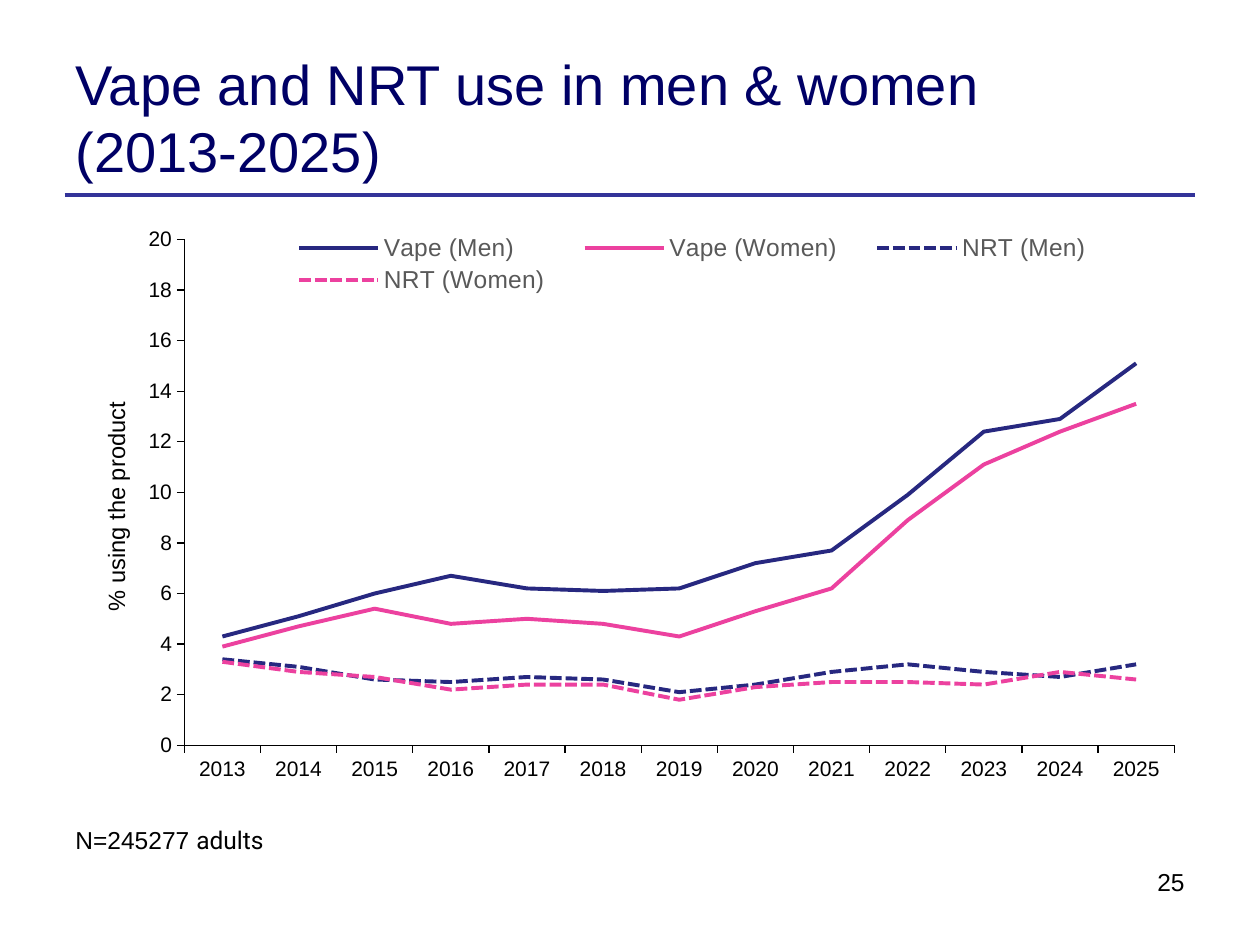
from dataclasses import dataclass
from typing import Optional

from lxml.etree import SubElement
from pptx import Presentation
from pptx.chart.data import CategoryChartData
from pptx.dml.color import RGBColor
from pptx.enum.chart import XL_CHART_TYPE, XL_LEGEND_POSITION, XL_MARKER_STYLE, XL_TICK_MARK
from pptx.enum.dml import MSO_LINE
from pptx.enum.text import MSO_ANCHOR, PP_ALIGN
from pptx.oxml import parse_xml
from pptx.oxml.ns import nsdecls, qn
from pptx.util import Pt

BLACK = RGBColor(0x00, 0x00, 0x00)
TITLE_NAVY = RGBColor(0x00, 0x00, 0x66)
RULE_BLUE = RGBColor(0x33, 0x33, 0x99)
MEN_BLUE = RGBColor(0x27, 0x28, 0x80)
WOMEN_PINK = RGBColor(0xEC, 0x41, 0x9F)
LEGEND_GREY = RGBColor(0x59, 0x59, 0x59)
FONT = "Arial"
MARGIN = 36


@dataclass
class ProductUse:
    name: str
    percents: tuple
    color: RGBColor
    dash: Optional[MSO_LINE] = None


YEARS = [str(year) for year in range(2013, 2026)]
PRODUCT_USES = [
    ProductUse("Vape (Men)", (4.3, 5.1, 6, 6.7, 6.2, 6.1, 6.2, 7.2, 7.7, 9.9, 12.4, 12.9, 15.1), MEN_BLUE),
    ProductUse("Vape (Women)", (3.9, 4.7, 5.4, 4.8, 5, 4.8, 4.3, 5.3, 6.2, 8.9, 11.1, 12.4, 13.5), WOMEN_PINK),
    ProductUse("NRT (Men)", (3.4, 3.1, 2.6, 2.5, 2.7, 2.6, 2.1, 2.4, 2.9, 3.2, 2.9, 2.7, 3.2),
               MEN_BLUE, MSO_LINE.SQUARE_DOT),
    ProductUse("NRT (Women)", (3.3, 2.9, 2.7, 2.2, 2.4, 2.4, 1.8, 2.3, 2.5, 2.5, 2.4, 2.9, 2.6),
               WOMEN_PINK, MSO_LINE.SQUARE_DOT),
]


def style_font(font, size: float, color: RGBColor = BLACK, name: Optional[str] = FONT) -> None:
    font.size = Pt(size)
    font.color.rgb = color
    font.bold = False
    if name:
        font.name = name


def place(element, index: int, inner: bool = False, **fractions: float) -> None:
    """Give a chart part a manual layout, in fractions of the chart."""
    for old_layout in element.findall(qn("c:layout")):
        element.remove(old_layout)
    target = '<c:layoutTarget val="inner"/>' if inner else ""
    modes = "".join(f'<c:{key}Mode val="edge"/>' for key in ("x", "y"))
    values = "".join(f'<c:{key} val="{value}"/>' for key, value in fractions.items())
    element.insert(index, parse_xml(
        f'<c:layout {nsdecls("c")}><c:manualLayout>{target}{modes}{values}</c:manualLayout></c:layout>'))


def add_text(slide, left: float, top: float, width: float, height: float):
    frame = slide.shapes.add_textbox(Pt(left), Pt(top), Pt(width), Pt(height)).text_frame
    frame.word_wrap = True
    return frame.paragraphs[0]


def style_axis(axis) -> None:
    axis.has_major_gridlines = False
    axis.major_tick_mark = XL_TICK_MARK.OUTSIDE
    axis.minor_tick_mark = XL_TICK_MARK.NONE
    axis.format.line.color.rgb = BLACK
    axis.format.line.width = Pt(0.75)
    style_font(axis.tick_labels.font, 12)


def add_use_chart(slide) -> None:
    data = CategoryChartData()
    data.categories = YEARS
    for use in PRODUCT_USES:
        data.add_series(use.name, use.percents)
    chart = slide.shapes.add_chart(
        XL_CHART_TYPE.LINE, Pt(MARGIN), Pt(124), Pt(648), Pt(356.5), data).chart
    chart.has_title = False
    style_font(chart.font, 10)
    chart.plots[0].vary_by_categories = False
    place(chart._chartSpace.chart.plotArea, 0, inner=True, x=0.107, y=0.036, w=0.873, h=0.811)

    # Lines
    for series, use in zip(chart.plots[0].series, PRODUCT_USES):
        series.smooth = False
        series.marker.style = XL_MARKER_STYLE.NONE
        line = series.format.line
        line.color.rgb = use.color
        line.width = Pt(2.25)
        if use.dash:
            line.dash_style = use.dash

    # Axes
    style_axis(chart.category_axis)
    percent_axis = chart.value_axis
    style_axis(percent_axis)
    percent_axis.minimum_scale, percent_axis.maximum_scale = 0, 20
    percent_axis.major_unit = 2
    percent_axis.tick_labels.number_format = "0"
    percent_axis.tick_labels.number_format_is_linked = False
    axis_title = percent_axis.axis_title
    label = axis_title.text_frame.paragraphs[0]
    label.text = "% using the product"
    style_font(label.font, 13.5)
    body = axis_title._element.find(".//" + qn("a:bodyPr"))
    body.set("rot", "-5400000")
    body.set("vert", "horz")
    place(axis_title._element, 1, x=0.03, y=0.29)

    # Legend
    chart.has_legend = True
    legend = chart.legend
    legend.position = XL_LEGEND_POSITION.BOTTOM
    legend.include_in_layout = False
    style_font(legend.font, 14, LEGEND_GREY)
    place(legend._element, 1, x=0.18, y=0.02, w=0.75, h=0.11)


def main() -> None:
    presentation = Presentation()
    presentation.slide_width, presentation.slide_height = Pt(720), Pt(540)
    slide = presentation.slides.add_slide(presentation.slide_layouts[5])

    # Title and the rule below it
    rule = slide.shapes.add_connector(1, Pt(37), Pt(111.5), Pt(683), Pt(111.5))
    rule.line.color.rgb = RULE_BLUE
    rule.line.width = Pt(2.25)
    SubElement(rule._element.spPr, qn("a:effectLst"))
    title = slide.shapes.title
    title.left, title.top, title.width, title.height = Pt(MARGIN), Pt(21.5), Pt(568), Pt(90)
    title.text_frame.text = "Vape and NRT use in men & women (2013-2025)"
    title.text_frame.vertical_anchor = MSO_ANCHOR.MIDDLE
    heading = title.text_frame.paragraphs[0]
    heading.alignment = PP_ALIGN.LEFT
    style_font(heading.font, 32, TITLE_NAVY)

    add_use_chart(slide)

    # Page number
    page = add_text(slide, 484.5, 492, 199.5, 37.5)
    page.text = "25"
    page.alignment = PP_ALIGN.RIGHT
    style_font(page.font, 14)

    # Sample size
    sample = add_text(slide, MARGIN, 468, 613, 24.5)
    style_font(sample.font, 14, name=None)
    for words, font_name in (("N=245277 ", FONT), ("adults", "Roboto")):
        run = sample.add_run()
        run.text = words
        run.font.name = font_name

    presentation.save("out.pptx")


if __name__ == "__main__":
    main()
